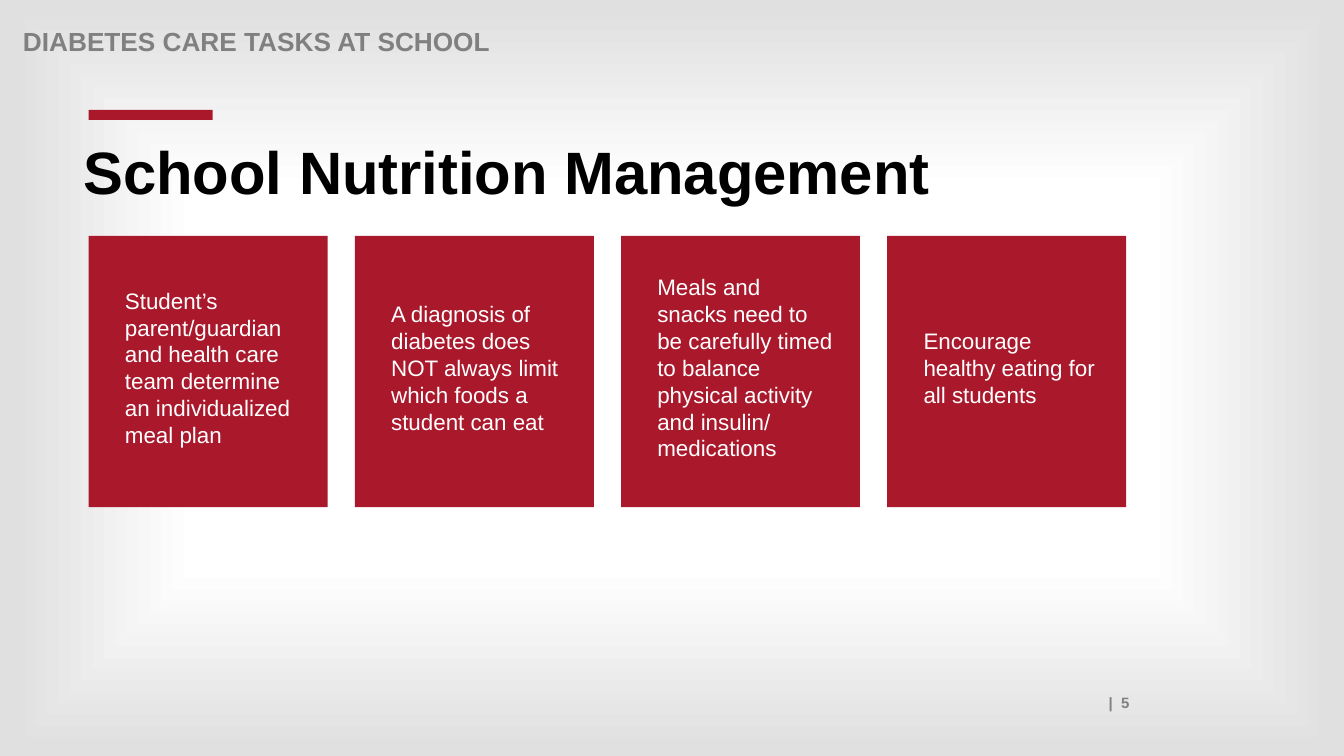
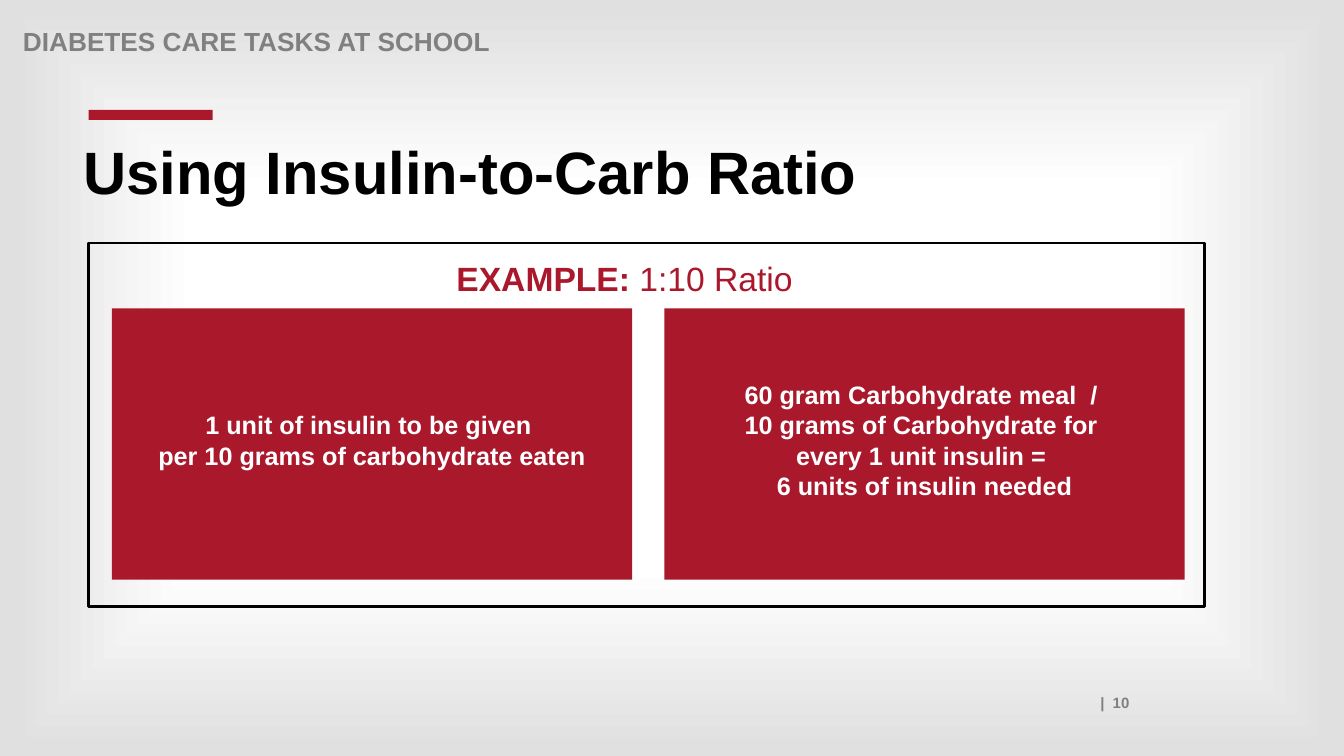
from lxml import etree
from pptx import Presentation
from pptx.dml.color import RGBColor
from pptx.enum import shapes, text
from pptx.util import Inches, Pt

RED = RGBColor(0xAA, 0x18, 0x2C)
GRAY = RGBColor(0x80, 0x80, 0x80)
BLACK = RGBColor(0, 0, 0)
WHITE = RGBColor(0xFF, 0xFF, 0xFF)
FONT = "Arial"
LEFT, RIGHT = text.PP_ALIGN.LEFT, text.PP_ALIGN.RIGHT
CENTER = text.PP_ALIGN.CENTER
GRADIENT = """
<a:gradFill xmlns:a="http://schemas.openxmlformats.org/drawingml/2006/main" rotWithShape="1">
  <a:gsLst>
    <a:gs pos="12000"><a:srgbClr val="FFFFFF"/></a:gs>
    <a:gs pos="50000"><a:srgbClr val="FFFFFF"/></a:gs>
    <a:gs pos="98000"><a:srgbClr val="E0E0E0"/></a:gs>
  </a:gsLst>
  <a:path path="shape"><a:fillToRect l="50000" t="50000" r="50000" b="50000"/></a:path>
</a:gradFill>"""


def write(shape, words, size, color, bold=False, align=LEFT, line=1.0):
    frame = shape.text_frame
    frame.word_wrap = True
    frame.text = words
    for para in frame.paragraphs:
        para.alignment = align
        para.line_spacing = line
        for run in para.runs:
            run.font.name = FONT
            run.font.size = Pt(size)
            run.font.bold = bold
            run.font.color.rgb = color
    return frame


def block(slide, left, top, width, height, fill=RED):
    shape = slide.shapes.add_shape(
        shapes.MSO_SHAPE.RECTANGLE, Inches(left), Inches(top), Inches(width), Inches(height))
    shape.shadow.inherit = False
    shape.line.fill.background()
    if fill is None:
        shape.fill.background()
    else:
        shape.fill.solid()
        shape.fill.fore_color.rgb = fill
    return shape


prs = Presentation()
prs.slide_width, prs.slide_height = Inches(13.33), Inches(7.5)

back = prs.slide_master.background
back.fill.solid()
solid = back._cSld.bg.bgPr[0]
solid.getparent().replace(solid, etree.fromstring(GRADIENT))

pages = [("School Nutrition Management", 5), ("Using Insulin-to-Carb Ratio", 10)]
for title, number in pages:
    slide = prs.slides.add_slide(prs.slide_layouts[6])
    foot = slide.shapes.add_textbox(Inches(1.21), Inches(6.83), Inches(10.09), Inches(0.28))
    write(foot, f"|  {number}", 10.7, GRAY, True, RIGHT)
    head = slide.shapes.add_textbox(Inches(0.13), Inches(0.24), Inches(11), Inches(0.28))
    write(head, "DIABETES CARE TASKS AT SCHOOL", 18.7, GRAY, True, line=0.9)
    block(slide, 0.88, 1.09, 1.23, 0.1)
    name = slide.shapes.add_textbox(Inches(0.73), Inches(1.37), Inches(11.03), Inches(0.97))
    write(name, title, 42.7, BLACK, True, line=0.9)

meals, ratio = prs.slides

tips = [
    "Student’s parent/guardian and health care team determine an individualized meal plan",
    "A diagnosis of diabetes does NOT always limit which foods a student can eat",
    "Meals and snacks need to be carefully timed to balance physical activity and insulin/ medications",
    "Encourage healthy eating for all students",
]
for i, tip in enumerate(tips):
    card = block(meals, 0.88 + i * 2.64, 2.34, 2.37, 2.69)
    frame = write(card, tip, 16, WHITE)
    frame.vertical_anchor = text.MSO_ANCHOR.MIDDLE
    frame.margin_left, frame.margin_right = Inches(0.36), Inches(0.25)
    frame.margin_bottom = Inches(0.13)

label = ratio.shapes.add_textbox(Inches(0.88), Inches(2.56), Inches(10.63), Inches(0.4))
frame = write(label, "EXAMPLE: ", 24, RED, True, CENTER)
frame.margin_left = frame.margin_right = frame.margin_top = frame.margin_bottom = 0
run = frame.paragraphs[0].add_run()
run.text = "1:10 Ratio"
run.font.name, run.font.size = FONT, Pt(24)
run.font.color.rgb = RED

steps = [
    "1 unit of insulin to be given \vper 10 grams of carbohydrate eaten",
    "60 gram Carbohydrate meal  / \v10 grams of Carbohydrate for \v"
    "every 1 unit insulin = \v6 units of insulin needed",
]
for i, step in enumerate(steps):
    card = block(ratio, 1.11 + i * 5.48, 3.06, 5.16, 2.69)
    frame = write(card, step, 18, WHITE, True, CENTER)
    frame.vertical_anchor = text.MSO_ANCHOR.MIDDLE
    frame.margin_bottom = Inches(0.13)

border = block(ratio, 0.88, 2.41, 11.07, 3.61, None)
border.line.color.rgb = BLACK
border.line.width = Pt(2)

prs.save("out.pptx")
